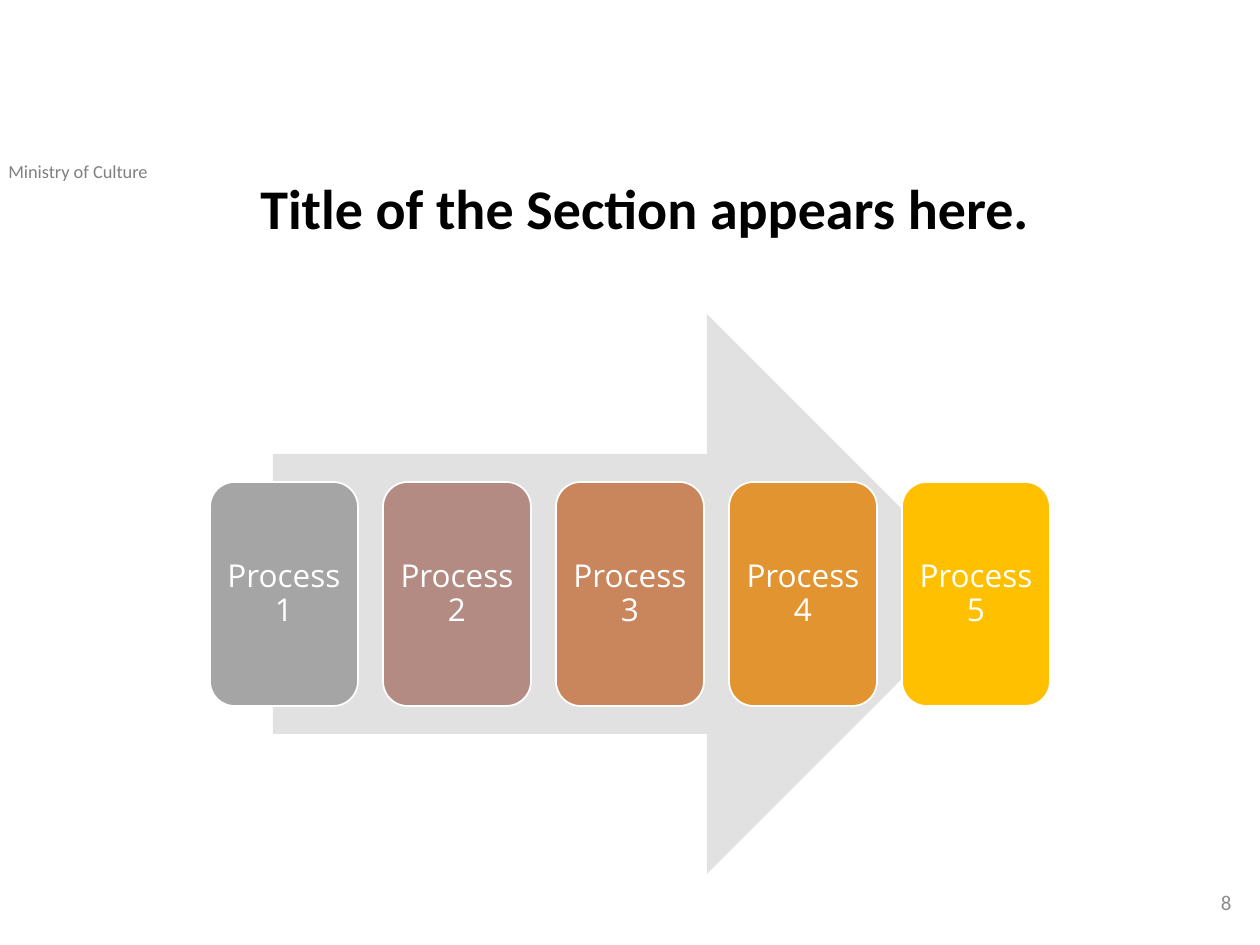
import pptx
import pptx.util
import pptx.dml.color
import pptx.enum.shapes
import pptx.enum.text

RGBColor = pptx.dml.color.RGBColor
SHAPE = pptx.enum.shapes.MSO_SHAPE
ALIGN = pptx.enum.text.PP_ALIGN
ANCHOR = pptx.enum.text.MSO_ANCHOR

WHITE = RGBColor(0xFF, 0xFF, 0xFF)
BLACK = RGBColor(0x00, 0x00, 0x00)
HEADER_GRAY = RGBColor(0x80, 0x80, 0x80)
NUMBER_GRAY = RGBColor(0x8C, 0x8C, 0x8C)
ARROW_GRAY = RGBColor(0xE1, 0xE1, 0xE1)
STEP_COLORS = [
    RGBColor(0xA5, 0xA5, 0xA5),
    RGBColor(0xB4, 0x8B, 0x83),
    RGBColor(0xC9, 0x85, 0x5C),
    RGBColor(0xE1, 0x94, 0x30),
    RGBColor(0xFF, 0xC0, 0x00),
]

EMU_PER_PX = 914400 / 126


def px(n):
    return pptx.util.Emu(round(n * EMU_PER_PX))


def set_text(sp, text, font, size, color, align=ALIGN.LEFT, anchor=ANCHOR.TOP,
             bold=False, line_spacing=1.0):
    tf = sp.text_frame
    tf.word_wrap = True
    tf.vertical_anchor = anchor
    p = tf.paragraphs[0]
    p.text = text
    p.alignment = align
    p.line_spacing = line_spacing
    r = p.runs[0]
    r.font.name = font
    r.font.size = pptx.util.Pt(size)
    r.font.bold = bold
    r.font.color.rgb = color


def add_text(s, box, text, size, color, **style):
    sp = s.shapes.add_textbox(*map(px, box))
    set_text(sp, text, "Calibri", size, color, **style)


def add_block(s, shape, box, fill):
    sp = s.shapes.add_shape(shape, *map(px, box))
    sp.shadow.inherit = False
    sp.fill.solid()
    sp.fill.fore_color.rgb = fill
    sp.line.fill.background()
    return sp


def add_process(s, box, labels):
    left, top, width, height = box

    # Arrow behind the steps, centred in the box
    arrow_w = round(width * 0.85)
    add_block(s, SHAPE.RIGHT_ARROW,
              (left + (width - arrow_w) // 2, top, arrow_w, height), ARROW_GRAY)

    # Equal steps spread over the full width
    step_w, step_h = 148, round(height * 0.4)
    pitch = (width - step_w) // (len(labels) - 1)
    step_top = top + (height - step_h) // 2
    for i, (label, color) in enumerate(zip(labels, STEP_COLORS)):
        sp = add_block(s, SHAPE.ROUNDED_RECTANGLE,
                       (left + i * pitch, step_top, step_w, step_h), color)
        sp.line.color.rgb = WHITE
        sp.line.width = pptx.util.Pt(1)
        tf = sp.text_frame
        tf.margin_left = tf.margin_right = px(8)
        tf.margin_top = tf.margin_bottom = px(8)
        set_text(sp, label, "Open Sans", 18, WHITE, align=ALIGN.CENTER,
                 anchor=ANCHOR.MIDDLE, line_spacing=0.9)


def main():
    prs = pptx.Presentation()
    prs.slide_width, prs.slide_height = px(1260), px(945)
    s = prs.slides.add_slide(prs.slide_layouts[6])

    # Header and page number
    add_text(s, (-4, 154, 275, 35), "Ministry of Culture", 10.5, HEADER_GRAY)
    add_text(s, (960, 877, 284, 50), "8", 12, NUMBER_GRAY,
             align=ALIGN.RIGHT, anchor=ANCHOR.MIDDLE)

    # Process diagram
    add_process(s, (210, 314, 840, 560), [f"Process {n}" for n in range(1, 6)])

    # Title
    add_text(s, (243, 175, 804, 100), "Title of the Section appears here.", 32,
             BLACK, align=ALIGN.CENTER, bold=True, line_spacing=0.9)

    prs.save("out.pptx")


if __name__ == "__main__":
    main()
